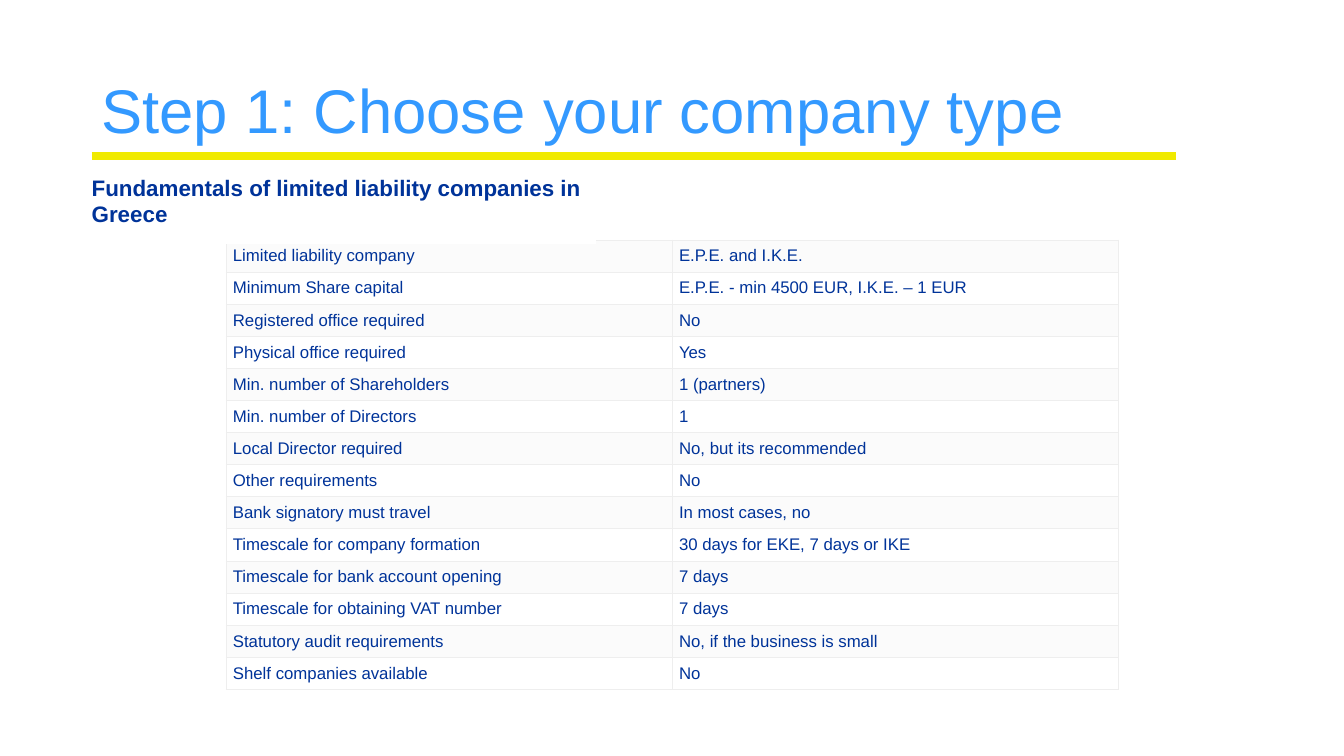
from lxml.etree import SubElement
from pptx import Presentation
from pptx.dml.color import RGBColor
from pptx.enum.shapes import MSO_CONNECTOR as CONNECTOR, MSO_SHAPE as SHAPE
from pptx.enum.text import MSO_ANCHOR as ANCHOR, PP_ALIGN as ALIGN
from pptx.oxml.ns import qn
from pptx.util import Inches, Pt

SKY = RGBColor(0x33, 0x99, 0xFF)
NAVY = RGBColor(0x00, 0x33, 0x99)
YELLOW = RGBColor(0xF0, 0xEA, 0x00)
WHITE = RGBColor(0xFF, 0xFF, 0xFF)
BAND = RGBColor(0xFB, 0xFB, 0xFB)
BORDER = RGBColor(0xEE, 0xEE, 0xEE)

TITLE_FONT = {"name": "Arial", "size": Pt(44), "bold": False}
HEADING_FONT = {"name": "Arial", "size": Pt(16), "bold": True}
CELL_FONT = {"name": "Arial", "size": Pt(12), "bold": False}

FUNDAMENTALS = [
    ("Limited liability company", "E.P.E. and I.K.E."),
    ("Minimum Share capital", "E.P.E. - min 4500 EUR, I.K.E. – 1 EUR"),
    ("Registered office required", "No"),
    ("Physical office required", "Yes"),
    ("Min. number of Shareholders", "1 (partners)"),
    ("Min. number of Directors", "1"),
    ("Local Director required", "No, but its recommended"),
    ("Other requirements", "No"),
    ("Bank signatory must travel", "In most cases, no"),
    ("Timescale for company formation", "30 days for EKE, 7 days or IKE"),
    ("Timescale for bank account opening", "7 days"),
    ("Timescale for obtaining VAT number", "7 days"),
    ("Statutory audit requirements", "No, if the business is small"),
    ("Shelf companies available", "No"),
]


def write(frame, text, font_values, colour):
    frame.text = text
    paragraph = frame.paragraphs[0]
    paragraph.alignment = ALIGN.LEFT
    font = paragraph.runs[0].font
    for name, value in font_values.items():
        setattr(font, name, value)
    font.color.rgb = colour
    return paragraph


def set_frame(frame, **values):
    for name, value in values.items():
        setattr(frame, name, value)


def add_rule(slide, left, top, width):
    rule = slide.shapes.add_connector(
        CONNECTOR.STRAIGHT, left, top, left + width, top)
    rule.line.color.rgb = YELLOW
    rule.line.width = Pt(6)
    SubElement(rule._element.spPr, qn("a:effectLst"))


def add_title(slide, left, top, width, height):
    frame = slide.shapes.add_textbox(left, top, width, height).text_frame
    set_frame(frame, word_wrap=True, vertical_anchor=ANCHOR.MIDDLE)
    title = write(frame, "Step 1: Choose your company type", TITLE_FONT, SKY)
    title.line_spacing = 0.9


def add_heading(slide, left, top, width, height):
    heading = slide.shapes.add_shape(SHAPE.RECTANGLE, left, top, width, height)
    heading.shadow.inherit = False
    heading.fill.solid()
    heading.fill.fore_color.rgb = WHITE
    heading.line.fill.background()
    frame = heading.text_frame
    set_frame(frame, word_wrap=True, vertical_anchor=ANCHOR.MIDDLE,
              margin_left=0, margin_right=0, margin_top=0,
              margin_bottom=Inches(0.16))
    write(frame, "Fundamentals of limited liability companies in Greece",
          HEADING_FONT, NAVY)


def add_borders(cell):
    properties = cell._tc.get_or_add_tcPr()
    for position, side in enumerate(("a:lnL", "a:lnR", "a:lnT", "a:lnB")):
        edge = properties.makeelement(qn(side), {"w": str(Pt(0.6))})
        properties.insert(position, edge)
        colour = SubElement(SubElement(edge, qn("a:solidFill")), qn("a:srgbClr"))
        colour.set("val", str(BORDER))


def add_fundamentals(slide, left, top, width, height):
    table = slide.shapes.add_table(
        len(FUNDAMENTALS), 2, left, top, width, height).table
    table.first_row = False
    table.horz_banding = False
    for row_index, entry in enumerate(FUNDAMENTALS):
        for column_index, text in enumerate(entry):
            cell = table.cell(row_index, column_index)
            set_frame(cell, vertical_anchor=ANCHOR.MIDDLE,
                      margin_left=Inches(0.07), margin_right=Inches(0.07),
                      margin_top=Inches(0.05), margin_bottom=Inches(0.05))
            write(cell.text_frame, text, CELL_FONT, NAVY)
            if row_index % 2 == 0:
                cell.fill.solid()
                cell.fill.fore_color.rgb = BAND
            else:
                cell.fill.background()
            add_borders(cell)


def main():
    deck = Presentation()
    deck.slide_width = Inches(13.33)
    deck.slide_height = Inches(7.5)
    slide = deck.slides.add_slide(deck.slide_layouts[6])
    margin = Inches(0.91)
    add_rule(slide, margin, Inches(1.55), Inches(10.75))
    add_title(slide, margin, Inches(0.4), Inches(11.5), Inches(1.45))
    add_fundamentals(slide, Inches(2.24), Inches(2.38), Inches(8.85), Inches(4.46))
    add_heading(slide, margin, Inches(1.72), Inches(5), Inches(0.7))
    deck.save("out.pptx")


if __name__ == "__main__":
    main()
